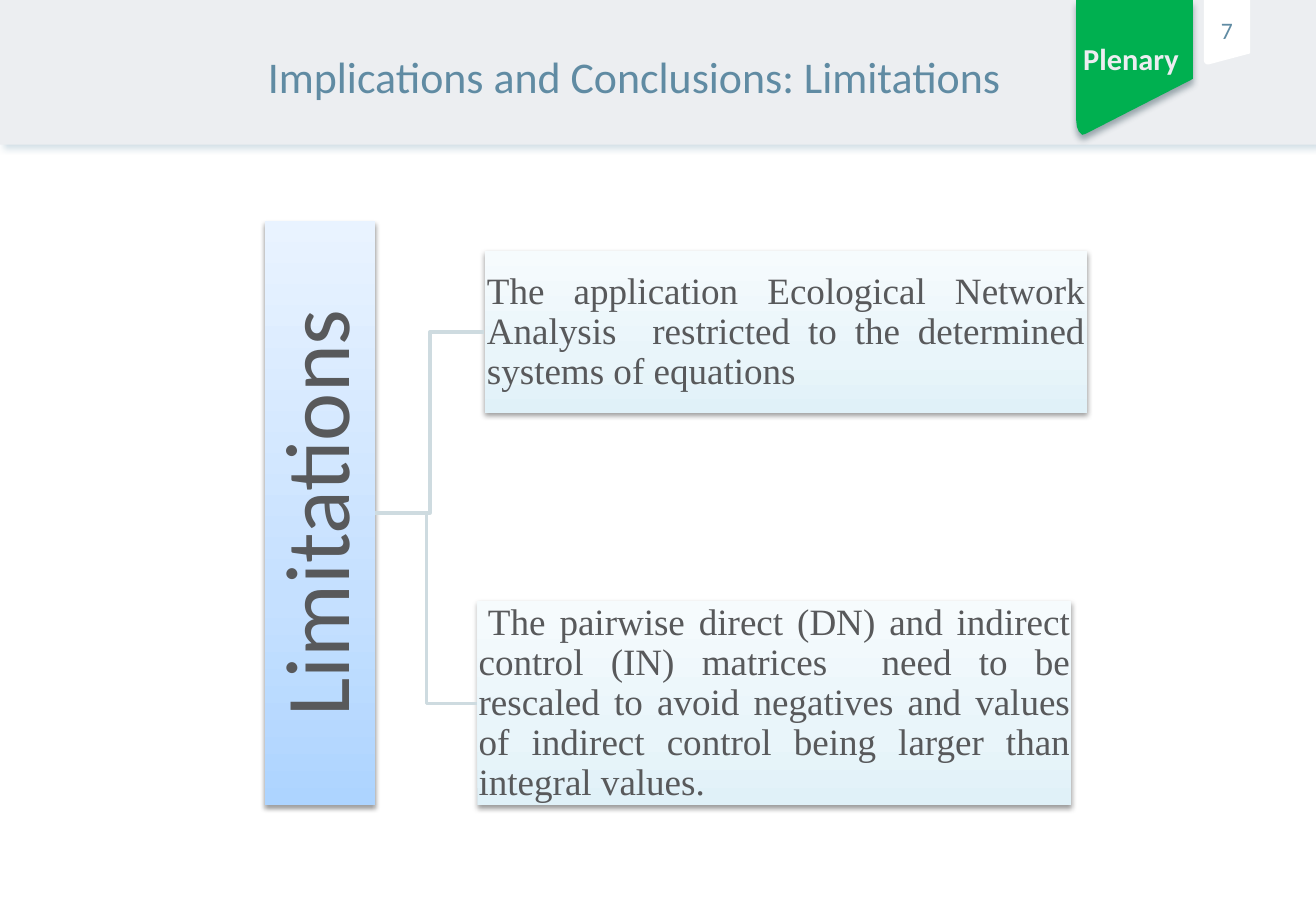
"""Build the Limitations slide with python-pptx."""
from lxml.etree import SubElement
from pptx import Presentation
from pptx.dml.color import RGBColor
from pptx.enum.shapes import MSO_CONNECTOR as Connector, MSO_SHAPE as Preset
from pptx.enum.text import MSO_ANCHOR as Anchor, PP_ALIGN as Align
from pptx.oxml.ns import qn
from pptx.util import Pt

WHITE = RGBColor(0xFF, 0xFF, 0xFF)
BAND = RGBColor(0xEC, 0xEE, 0xF1)
BAND_SHADOW = RGBColor(0x8F, 0xAE, 0xC1)
STEEL = RGBColor(0x60, 0x8B, 0xA3)
GREEN = RGBColor(0x00, 0xB0, 0x50)
GREEN_SHADOW = RGBColor(0x18, 0x36, 0x42)
TAG_TEXT = RGBColor(0xEC, 0xED, 0xF1)
BRANCH = RGBColor(0xCE, 0xDB, 0xE0)
GREY = RGBColor(0x58, 0x59, 0x5B)
BLACK = RGBColor(0x00, 0x00, 0x00)
BLUE_STOPS = [(0, RGBColor(0xAD, 0xD4, 0xFF)), (35, RGBColor(0xC5, 0xE0, 0xFF)),
              (100, RGBColor(0xE9, 0xF3, 0xFF))]
PALE_STOPS = [(0, RGBColor(0xE0, 0xF1, 0xF8)), (35, RGBColor(0xE9, 0xF5, 0xFA)),
              (100, RGBColor(0xF6, 0xFB, 0xFD))]
SANS, SERIF = "Calibri", "Times New Roman"

SLIDE_SIZE = (780, 540)
HEADER_BOX = (0, 0, 780, 85.7)
TITLE = [("Implications and Conclusions: Limitations", SANS, 26, STEEL, False)]
TITLE_BOX = (51.8, 25.9, 648.7, 29.5)
PAGE_NUMBER = [("7", SANS, 14, STEEL, False)]
PAGE_TAB = [(713.5, 0), (740.9, 0), (740.9, 31.7), (716.4, 38.2), (715.3, 38.2),
            (714, 37.3), (713.5, 36)]
TAG = [("Plenary", SANS, 18, TAG_TEXT, True)]
TAG_BOX = (639.4, 23.8, 61.9, 21.6)
RIBBON = [(637.9, 0), (707, 0), (707, 46.8), (643.7, 79.2), (641.5, 79.9),
          (639.4, 77.8), (638.3, 75), (637.9, 71.3)]
ROOT = [("Limitations", SANS, 54, GREY, False)]
ROOT_BOX = (157, 131, 65.5, 346.3)
POINTS = [
    ((287.2, 149, 357.2, 95.8), 1.4,
     [("The application Ecological Network Analysis  restricted to the determined "
       "systems of equations", SERIF, 22, GREY, False)]),
    ((283, 356.4, 352, 121), 0.7,
     [(" ", SANS, 12, GREY, False),
      ("The pairwise direct (DN) and indirect control (IN) matrices  need to be "
       "rescaled to avoid negatives and values of indirect control being larger than "
       "integral values.", SERIF, 22, GREY, False)]),
]


def add_shadow(shape, color, alpha, blur, distance, angle):
    effects = shape._element.spPr.find(qn("a:effectLst"))
    shadow = SubElement(effects, qn("a:outerShdw"), blurRad=str(Pt(blur)),
                        dist=str(Pt(distance)), dir=str(angle * 60000), rotWithShape="0")
    tint = SubElement(shadow, qn("a:srgbClr"), val=str(color))
    SubElement(tint, qn("a:alpha"), val=str(alpha * 1000))


def flatten(shape, color):
    shape.shadow.inherit = False
    shape.line.fill.background()
    shape.fill.solid()
    shape.fill.fore_color.rgb = color
    return shape


def add_box(slide, box, color):
    return flatten(slide.shapes.add_shape(Preset.RECTANGLE, *map(Pt, box)), color)


def add_outline(slide, points, color):
    corners = [(Pt(x), Pt(y)) for x, y in points]
    builder = slide.shapes.build_freeform(*corners[0], scale=1.0)
    builder.add_line_segments(corners[1:], close=True)
    return flatten(builder.convert_to_shape(), color)


def add_gradient_box(slide, box, stops):
    shape = add_box(slide, box, WHITE)
    shape.fill.gradient()
    shape.fill.gradient_angle = 90
    stop_list = shape._element.spPr.find(".//" + qn("a:gsLst"))
    stop_list.clear()
    for position, color in stops:
        stop = SubElement(stop_list, qn("a:gs"), pos=str(position * 1000))
        SubElement(stop, qn("a:srgbClr"), val=str(color))
    add_shadow(shape, BLACK, 38, 3.1, 1.6, 90)
    return shape


def write(shape, runs, align=Align.CENTER, anchor=Anchor.TOP, insets=(0, 0, 0, 0),
          spacing=1.0, wrap=True):
    frame = shape.text_frame
    frame.word_wrap = wrap
    frame.vertical_anchor = anchor
    frame.margin_left, frame.margin_top, frame.margin_right, frame.margin_bottom = map(
        Pt, insets)
    paragraph = frame.paragraphs[0]
    paragraph.alignment = align
    paragraph.line_spacing = spacing
    for text, font, size, color, bold in runs:
        run = paragraph.add_run()
        run.text = text
        run.font.name = font
        run.font.size = Pt(size)
        run.font.color.rgb = color
        run.font.bold = bold


def add_branch(slide, root, leaf):
    connector = slide.shapes.add_connector(Connector.ELBOW, 0, 0, 0, 0)
    connector.begin_connect(root, 3)
    connector.end_connect(leaf, 1)
    connector.line.color.rgb = BRANCH
    connector.line.width = Pt(2)
    SubElement(connector._element.spPr, qn("a:effectLst"))


def main():
    presentation = Presentation()
    presentation.slide_width, presentation.slide_height = map(Pt, SLIDE_SIZE)
    slide = presentation.slides.add_slide(presentation.slide_layouts[6])

    header = add_box(slide, HEADER_BOX, BAND)
    add_shadow(header, BAND_SHADOW, 40, 4, 3, 45)
    page_tab = add_outline(slide, PAGE_TAB, WHITE)
    write(page_tab, PAGE_NUMBER, anchor=Anchor.MIDDLE, insets=(0, 0, 0, 2.9), wrap=False)
    ribbon = add_outline(slide, RIBBON, GREEN)
    add_shadow(ribbon, GREEN_SHADOW, 40, 4, 3, 90)
    write(add_box(slide, TAG_BOX, GREEN), TAG)
    title = slide.shapes.add_textbox(*map(Pt, TITLE_BOX))
    write(title, TITLE, insets=(7.2, 3.6, 7.2, 3.6))

    root = add_gradient_box(slide, ROOT_BOX, BLUE_STOPS)
    write(root, ROOT, anchor=Anchor.MIDDLE, insets=(2.9,) * 4, spacing=0.9)
    root.text_frame._txBody.bodyPr.set("vert", "vert270")
    for box, inset, runs in POINTS:
        leaf = add_gradient_box(slide, box, PALE_STOPS)
        write(leaf, runs, Align.JUSTIFY, Anchor.MIDDLE, (inset,) * 4, 0.9)
        add_branch(slide, root, leaf)

    presentation.save("out.pptx")


if __name__ == "__main__":
    main()
